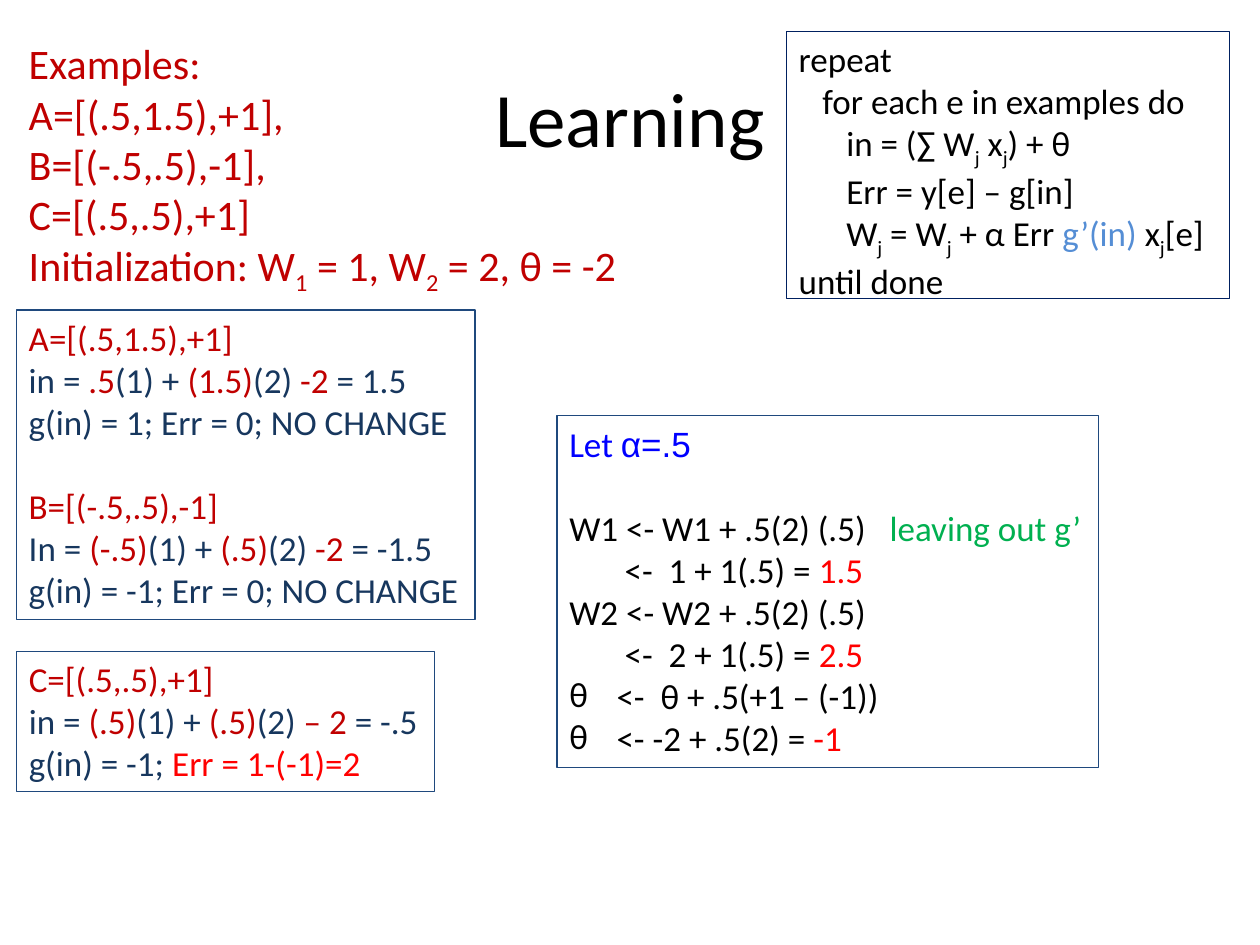
from dataclasses import dataclass

from lxml.etree import SubElement
from pptx import Presentation
from pptx.dml.color import RGBColor
from pptx.enum.shapes import MSO_SHAPE as Preset
from pptx.enum.text import MSO_ANCHOR as Anchor, MSO_AUTO_SIZE as AutoSize, PP_ALIGN as Align
from pptx.oxml.ns import qn
from pptx.util import Pt

BLACK = RGBColor(0x00, 0x00, 0x00)
DARK_RED = RGBColor(0xC0, 0x00, 0x00)
RED = RGBColor(0xFF, 0x00, 0x00)
NAVY = RGBColor(0x17, 0x37, 0x5E)
DEEP_BLUE = RGBColor(0x00, 0x20, 0x60)
BORDER_BLUE = RGBColor(0x1F, 0x49, 0x7D)
BLUE = RGBColor(0x00, 0x00, 0xFF)
LIGHT_BLUE = RGBColor(0x55, 0x8E, 0xD5)
GREEN = RGBColor(0x00, 0xB0, 0x50)

LEFT, TOP = 9.36, 18
CODE_STEP = 13.6
UPDATE_INDENT = 31.7
BLANK_LINE = 24.4


@dataclass
class Line:
    """Runs are (text, colour) or (text, colour, font); an underscore lowers the next letter."""
    runs: list
    indent: float = 0
    before: float = 0
    bullet: str = ""
    tab: float = 0


@dataclass
class SlideWriter:
    slide: object
    font: str = "Calibri"
    line_width: float = 0.75

    def title(self, text, left, top, width, height):
        shape = self.slide.shapes.title
        shape.left, shape.top, shape.width, shape.height = map(Pt, (left, top, width, height))
        frame = shape.text_frame
        frame.text = text
        frame.vertical_anchor = Anchor.MIDDLE
        paragraph = frame.paragraphs[0]
        paragraph.alignment = Align.CENTER
        self.format_run(paragraph.runs[0], 44, BLACK, self.font)

    def text(self, lines, left, top, width, height, size):
        box = self.slide.shapes.add_textbox(*map(Pt, (left, top, width, height)))
        self.fill_frame(box.text_frame, lines, size)

    def framed_text(self, lines, left, top, width, height, border, size=20):
        box = self.slide.shapes.add_shape(Preset.RECTANGLE, *map(Pt, (left, top, width, height)))
        box.shadow.inherit = False
        box.fill.background()
        box.line.color.rgb = border
        box.line.width = Pt(self.line_width)
        self.fill_frame(box.text_frame, lines, size)

    def fill_frame(self, frame, lines, size):
        frame.word_wrap = False
        frame.auto_size = AutoSize.SHAPE_TO_FIT_TEXT
        frame.vertical_anchor = Anchor.TOP
        for number, line in enumerate(lines):
            paragraph = frame.add_paragraph() if number else frame.paragraphs[0]
            paragraph.alignment = Align.LEFT
            if line.before:
                paragraph.space_before = Pt(line.before)
            self.format_indent(paragraph, line)
            for text, color, *font in line.runs:
                self.add_runs(paragraph, text, size, color, font[0] if font else self.font)

    def format_indent(self, paragraph, line):
        properties = paragraph._p.get_or_add_pPr()
        if line.indent:
            properties.set("marL", str(Pt(line.indent)))
        if line.bullet:
            properties.set("indent", str(-Pt(line.indent)))
            SubElement(properties, qn("a:buFont"), typeface=self.font)
            SubElement(properties, qn("a:buChar"), char=line.bullet)
        if line.tab:
            tabs = SubElement(properties, qn("a:tabLst"))
            SubElement(tabs, qn("a:tab"), pos=str(Pt(line.tab)), algn="l")

    def add_runs(self, paragraph, text, size, color, font):
        first, *rest = text.split("_")
        pieces = [(first, False)]
        for part in rest:
            pieces += [(part[0], True), (part[1:], False)]
        for piece, lowered in pieces:
            if piece:
                run = paragraph.add_run()
                run.text = piece
                self.format_run(run, size, color, font)
                if lowered:
                    run._r.get_or_add_rPr().set("baseline", "-25000")

    def format_run(self, run, size, color, font):
        run.font.size = Pt(size)
        run.font.name = font
        run.font.color.rgb = color


def example_lines(example, name, x1, x2, theta, result, outcome, before=0):
    """Worked example: the data, the weighted sum and the outcome."""
    weighted_sum = [(f"{name} = ", NAVY), (x1, DARK_RED), ("(1) + ", NAVY), (x2, DARK_RED),
                    ("(2) ", NAVY), (theta, DARK_RED), (f" = {result}", NAVY)]
    return [Line([(example, DARK_RED)], before=before), Line(weighted_sum), Line(outcome)]


def main():
    presentation = Presentation()
    presentation.slide_width, presentation.slide_height = Pt(720), Pt(540)
    writer = SlideWriter(presentation.slides.add_slide(presentation.slide_layouts[5]))

    writer.title("Learning", 36, 21.6, 648, 90)

    examples = ["Examples:", "A=[(.5,1.5),+1],", "B=[(-.5,.5),-1],", "C=[(.5,.5),+1]",
                "Initialization: W_1 = 1, W_2 = 2, θ = -2"]
    writer.text([Line([(text, DARK_RED)]) for text in examples], LEFT, TOP, 354.96, 152.64, 24)

    unchanged = (
        example_lines("A=[(.5,1.5),+1]", "in", ".5", "(1.5)", "-2", "1.5",
                      [("g(in) = 1; Err = 0; NO CHANGE", NAVY)])
        + example_lines("B=[(-.5,.5),-1]", "In", "(-.5)", "(.5)", "-2", "-1.5",
                        [("g(in) = -1; Err = 0; NO CHANGE", NAVY)], before=BLANK_LINE))
    writer.framed_text(unchanged, LEFT, 177.12, 262.08, 177.12, BORDER_BLUE)

    changed = example_lines("C=[(.5,.5),+1]", "in", "(.5)", "(.5)", "– 2", "-.5",
                            [("g(in) = -1; ", NAVY), ("Err = 1-(-1)=2", RED)])
    writer.framed_text(changed, LEFT, 372.24, 239.04, 79.92, BORDER_BLUE)

    updates = [
        Line([("Let ", BLUE), ("α=.5", BLUE, "Arial")]),
        Line([("W1 <- W1 + .5(2) (.5)\t", BLACK), ("leaving out g’", GREEN)],
             before=BLANK_LINE, tab=183),
        Line([("<-  1 + 1(.5) = ", BLACK), ("1.5", RED)], indent=UPDATE_INDENT),
        Line([("W2 <- W2 + .5(2) (.5)", BLACK)]),
        Line([("<-  2 + 1(.5) = ", BLACK), ("2.5", RED)], indent=UPDATE_INDENT),
        Line([("<-  θ + .5(+1 – (-1))", BLACK)], indent=27, bullet="θ"),
        Line([("<- -2 + .5(2) = ", BLACK), ("-1", RED)], indent=27, bullet="θ"),
    ]
    writer.framed_text(updates, 318.24, 237.6, 309.6, 200.88, BORDER_BLUE)

    algorithm = [
        Line([("repeat", BLACK)]),
        Line([("for each e in examples do", BLACK)], indent=CODE_STEP),
        Line([("in = (∑ W_j x_j) + θ", BLACK)], indent=2 * CODE_STEP),
        Line([("Err = y[e] – g[in]", BLACK)], indent=2 * CODE_STEP),
        Line([("W_j = W_j + α Err ", BLACK), ("g’(in) ", LIGHT_BLUE), ("x_j[e]", BLACK)],
             indent=2 * CODE_STEP),
        Line([("until done", BLACK)]),
    ]
    writer.framed_text(algorithm, 449.28, TOP, 253.44, 152.64, DEEP_BLUE)

    presentation.save("out.pptx")


if __name__ == "__main__":
    main()
